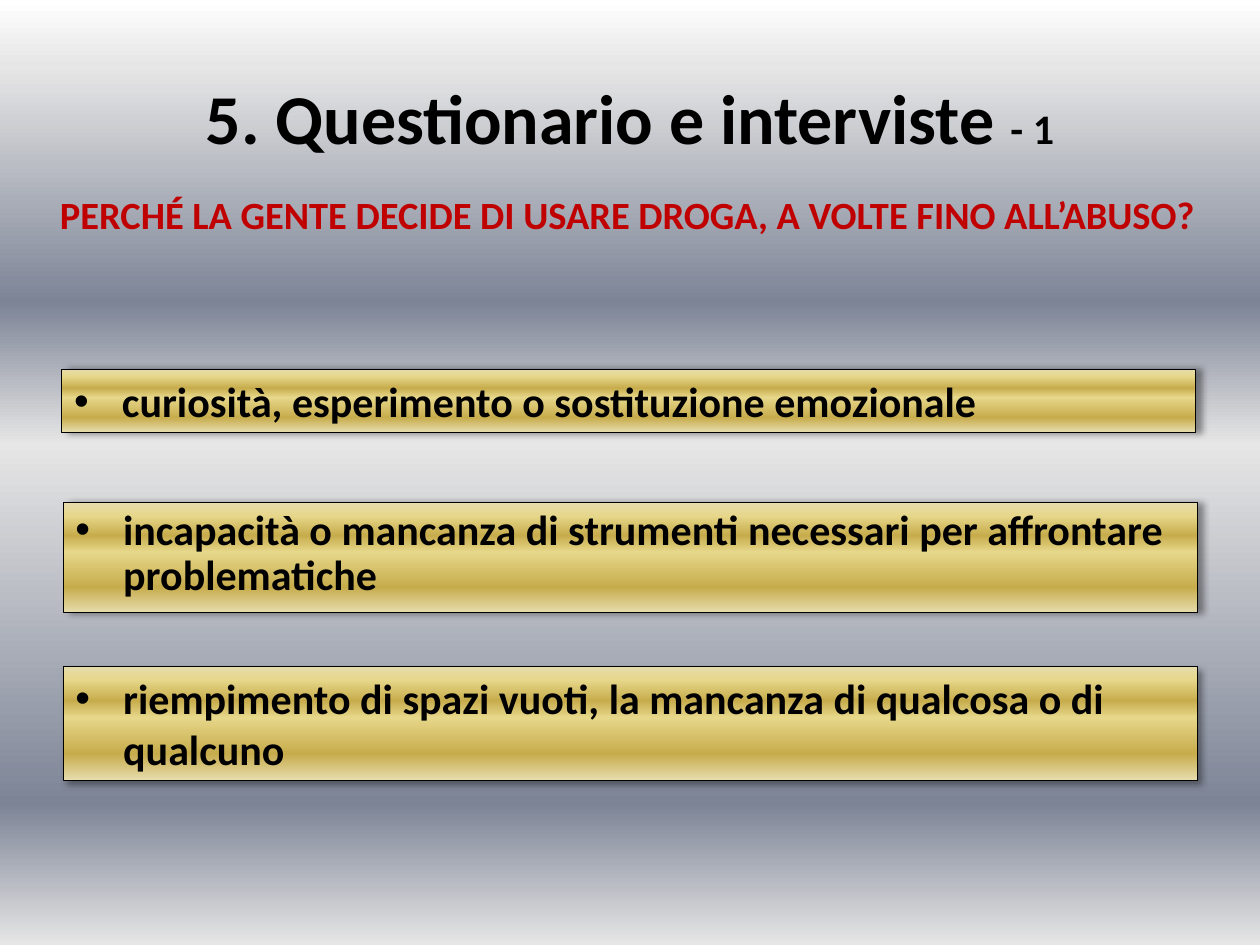
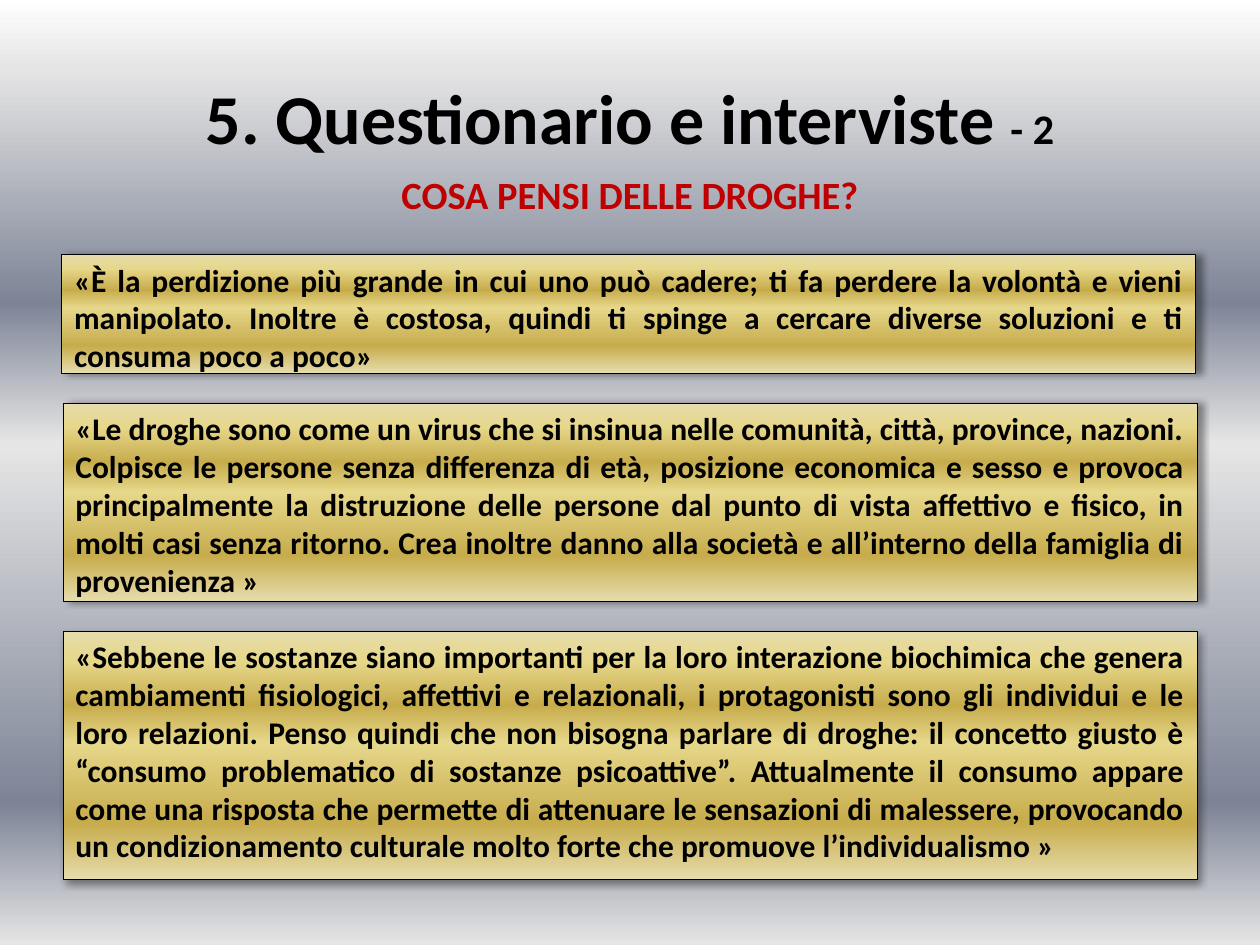
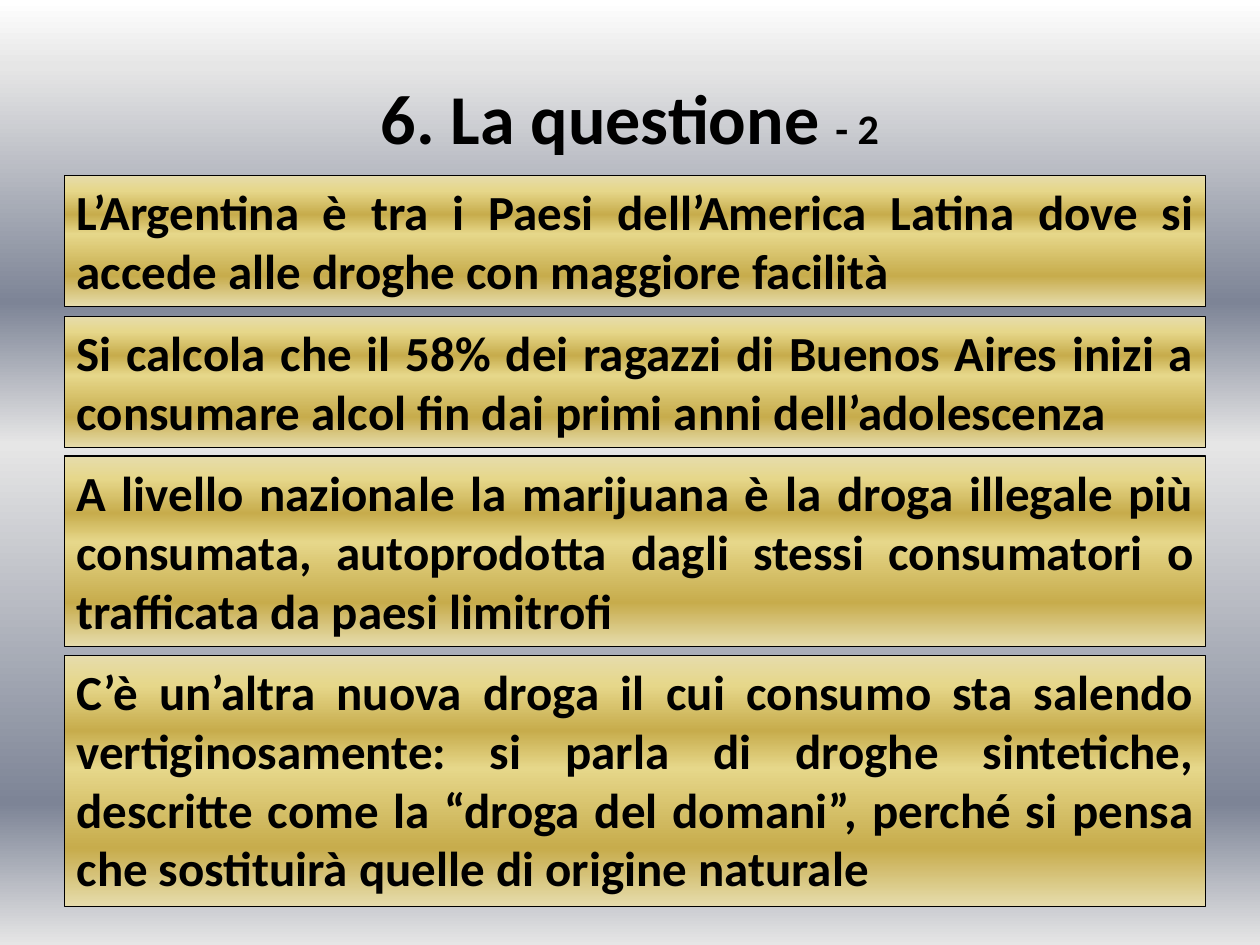
from lxml import etree
from pptx import Presentation
from pptx.dml.color import RGBColor
from pptx.enum.shapes import MSO_SHAPE
from pptx.enum.text import MSO_ANCHOR, MSO_AUTO_SIZE, PP_ALIGN
from pptx.oxml.ns import qn
from pptx.util import Inches, Pt

RECT = MSO_SHAPE.RECTANGLE
TOP, MIDDLE = MSO_ANCHOR.TOP, MSO_ANCHOR.MIDDLE
LEFT, CENTER, JUSTIFY = PP_ALIGN.LEFT, PP_ALIGN.CENTER, PP_ALIGN.JUSTIFY
GROW, FIXED = MSO_AUTO_SIZE.SHAPE_TO_FIT_TEXT, MSO_AUTO_SIZE.NONE

FONT = "Calibri"
BLACK, RED = "000000", "C00000"
SILVER = [(0, "FFFFFF"), (7, "E6E6E6"), (32, "7D8496"),
          (47, "E6E6E6"), (85, "7D8496"), (100, "E6E6E6")]
GOLD = [(0, "E6DCAC"), (12, "E6D78A"), (30, "C7AC4C"),
        (45, "E6D78A"), (77, "C7AC4C"), (100, "E6DCAC")]

# Each box: left, top, width, height, line width, shadow angle, line spacing, text
SLIDES = [
    dict(title="5. Questionario e interviste ", number="- 1",
         question=(0.04, 1.47, 9.88,
                   "PERCHÉ LA GENTE DECIDE DI USARE DROGA, A VOLTE FINO ALL’ABUSO?"),
         size=24, align=LEFT, bullets=True, auto_size=FIXED,
         boxes=[
             (0.49, 2.93, 9, 0.5, 0.25, 0, 1,
              "curiosità, esperimento o sostituzione emozionale"),
             (0.5, 3.99, 9, 0.87, 0.25, 0, 0.9,
              "incapacità o mancanza di strumenti necessari per affrontare "
              "problematiche"),
             (0.5, 5.29, 9, 0.9, 0.25, 45, 1,
              "riempimento di spazi vuoti, la mancanza di qualcosa o di qualcuno"),
         ]),
    dict(title="5. Questionario e interviste ", number="- 2",
         question=(0.67, 1.31, 8.66, "COSA PENSI DELLE DROGHE?"),
         size=18, align=JUSTIFY, bullets=False, auto_size=FIXED,
         boxes=[
             (0.49, 2.02, 9, 0.94, 0.25, 0, 1,
              "«È la perdizione più grande in cui uno può cadere; ti fa perdere la "
              "volontà e vieni manipolato. Inoltre è costosa, quindi ti spinge a "
              "cercare diverse soluzioni e ti consuma poco a poco»"),
             (0.5, 3.2, 9, 1.57, 0.25, 0, 1,
              "«Le droghe sono come un virus che si insinua nelle comunità, città, "
              "province, nazioni. Colpisce le persone senza differenza di età, "
              "posizione economica e sesso e provoca principalmente la distruzione "
              "delle persone dal punto di vista affettivo e fisico, in molti casi "
              "senza ritorno. Crea inoltre danno alla società e all’interno della "
              "famiglia di provenienza »"),
             (0.5, 5.01, 9, 1.97, 0.25, 45, 1,
              "«Sebbene le sostanze siano importanti per la loro interazione "
              "biochimica che genera cambiamenti fisiologici, affettivi e "
              "relazionali, i protagonisti sono gli individui e le loro relazioni. "
              "Penso quindi che non bisogna parlare di droghe: il concetto giusto è "
              "“consumo problematico di sostanze psicoattive”. Attualmente il "
              "consumo appare come una risposta che permette di attenuare le "
              "sensazioni di malessere, provocando un condizionamento culturale "
              "molto forte che promuove l’individualismo »"),
         ]),
    dict(title="6. La questione ", number="- 2", question=None,
         size=28, align=JUSTIFY, bullets=False, auto_size=GROW,
         boxes=[
             (0.51, 1.39, 9.06, 1.04, 0.25, None, 1,
              "L’Argentina è tra i Paesi dell’America Latina dove si accede alle "
              "droghe con maggiore facilità"),
             (0.51, 2.51, 9.06, 1.04, 0.25, None, 1,
              "Si calcola che il 58% dei ragazzi di Buenos Aires inizi a consumare "
              "alcol fin dai primi anni dell’adolescenza"),
             (0.51, 3.62, 9.06, 1.51, 0.75, None, 1,
              "A livello nazionale la marijuana è la droga illegale più consumata, "
              "autoprodotta dagli stessi consumatori o trafficata da paesi limitrofi"),
             (0.51, 5.2, 9.06, 1.99, 0.25, None, 1,
              "C’è un’altra nuova droga il cui consumo sta salendo "
              "vertiginosamente: si parla di droghe sintetiche, descritte come la "
              "“droga del domani”, perché si pensa che sostituirà quelle di origine "
              "naturale"),
         ]),
]


def fill_gradient(fill, element, stops):
    fill.gradient()
    fill.gradient_angle = 270
    gs_list = element.xpath(".//a:gsLst")[0]
    for gs in list(gs_list):
        gs_list.remove(gs)
    for pos, color in stops:
        gs = etree.SubElement(gs_list, qn("a:gs"), pos=str(pos * 1000))
        etree.SubElement(gs, qn("a:srgbClr"), val=color)


def set_text(sp, runs, color, align, anchor, auto_size):
    tf = sp.text_frame
    tf.word_wrap = True
    tf.auto_size = auto_size
    tf.vertical_anchor = anchor
    p = tf.paragraphs[0]
    p.alignment = align
    for text, size in runs:
        r = p.add_run()
        r.text = text
        r.font.name = FONT
        r.font.size = Pt(size)
        r.font.bold = True
        r.font.color.rgb = RGBColor.from_string(color)
    return p


prs = Presentation()
prs.slide_width, prs.slide_height = Inches(10), Inches(7.5)

for data in SLIDES:
    s = prs.slides.add_slide(prs.slide_layouts[6])
    fill_gradient(s.background.fill, s.element, SILVER)

    # Title with its part number
    sp = s.shapes.add_textbox(Inches(0.5), Inches(0.3), Inches(9), Inches(1.25))
    set_text(sp, [(data["title"], 40), (data["number"], 24)],
             BLACK, CENTER, MIDDLE, FIXED)

    # Question under the title
    if data["question"]:
        left, top, width, text = data["question"]
        sp = s.shapes.add_textbox(Inches(left), Inches(top), Inches(width), Inches(0.47))
        set_text(sp, [(text, 22)], RED, CENTER, TOP, GROW)

    # Gold boxes
    for left, top, width, height, line_width, angle, spacing, text in data["boxes"]:
        sp = s.shapes.add_shape(RECT, Inches(left), Inches(top),
                                Inches(width), Inches(height))
        fill_gradient(sp.fill, sp.element, GOLD)
        sp.line.color.rgb = RGBColor.from_string(BLACK)
        sp.line.width = Pt(line_width)
        sp.shadow.inherit = False
        p = set_text(sp, [(text, data["size"])], BLACK,
                     data["align"], TOP, data["auto_size"])
        p.line_spacing = spacing

        if angle is not None:
            effects = sp.element.spPr.find(qn("a:effectLst"))
            shadow = etree.SubElement(
                effects, qn("a:outerShdw"), blurRad=str(Pt(4)), dist=str(Pt(3)),
                dir=str(angle * 60000), algn="tl", rotWithShape="0")
            color = etree.SubElement(shadow, qn("a:srgbClr"), val=BLACK)
            etree.SubElement(color, qn("a:alpha"), val="40000")

        if data["bullets"]:
            pPr = p._p.get_or_add_pPr()
            pPr.set("marL", str(Inches(0.38)))
            pPr.set("indent", str(-Inches(0.38)))
            etree.SubElement(pPr, qn("a:buFont"), typeface="Arial")
            etree.SubElement(pPr, qn("a:buChar"), char="•")

prs.save("out.pptx")
